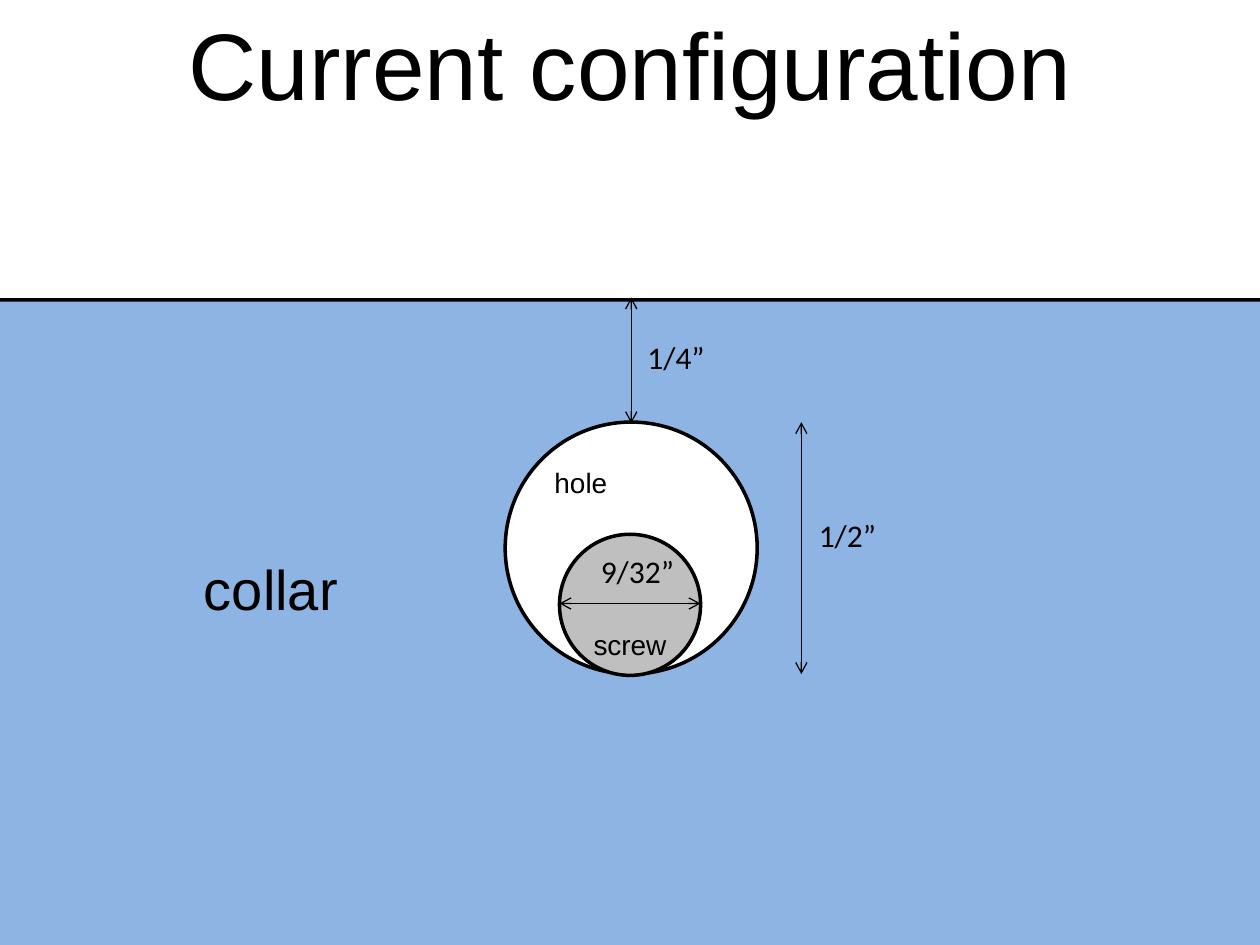
from lxml.etree import SubElement
from pptx import Presentation
from pptx.dml.color import RGBColor
from pptx.enum.shapes import MSO_CONNECTOR, MSO_SHAPE
from pptx.enum.text import MSO_ANCHOR, MSO_AUTO_SIZE, PP_ALIGN
from pptx.oxml.ns import qn
from pptx.util import Inches, Pt

COLORS = {"ink": "000000", "collar": "8EB4E3", "hole": "FFFFFF", "screw": "BFBFBF"}
COLUMNS, ROWS = 100, 75


class Diagram:
    """Draws styled elements on one slide, placed by grid columns and rows."""

    label_font = "Arial"
    dimension_font = "Calibri"
    outline_width = Pt(2)
    dimension_width = Pt(0.75)

    def __init__(self, presentation):
        self.slide = presentation.slides.add_slide(presentation.slide_layouts[6])
        self.column = presentation.slide_width / COLUMNS
        self.row = presentation.slide_height / ROWS

    def place(self, column, row):
        return round(column * self.column), round(row * self.row)

    def color(self, name):
        return RGBColor.from_string(COLORS[name])

    def add_words(self, frame, text, size, font, align):
        paragraph = frame.paragraphs[0]
        paragraph.alignment = align
        run = paragraph.add_run()
        run.text = text
        run.font.size = Pt(size)
        run.font.name = font
        run.font.color.rgb = self.color("ink")

    def shape(self, kind, left, top, width, height, fill):
        shape = self.slide.shapes.add_shape(
            kind, *self.place(left, top), *self.place(width, height))
        shape.shadow.inherit = False
        shape.fill.solid()
        shape.fill.fore_color.rgb = self.color(fill)
        shape.line.color.rgb = self.color("ink")
        shape.line.width = self.outline_width
        return shape

    def circle(self, center, middle, radius, fill, text, align, anchor, side, top, bottom):
        circle = self.shape(MSO_SHAPE.OVAL, center - radius, middle - radius,
                            2 * radius, 2 * radius, fill)
        frame = circle.text_frame
        frame.word_wrap = True
        frame.vertical_anchor = anchor
        frame.margin_left = frame.margin_right = Inches(side)
        frame.margin_top, frame.margin_bottom = Inches(top), Inches(bottom)
        self.add_words(frame, text, 16, self.label_font, align)

    def text(self, left, top, width, height, text, size, font, align=PP_ALIGN.LEFT, wrap=True):
        box = self.slide.shapes.add_textbox(*self.place(left, top), *self.place(width, height))
        frame = box.text_frame
        frame.word_wrap = wrap
        frame.auto_size = MSO_AUTO_SIZE.SHAPE_TO_FIT_TEXT
        self.add_words(frame, text, size, font, align)

    def dimension(self, start, end, label, left, top, width):
        connector = self.slide.shapes.add_connector(
            MSO_CONNECTOR.STRAIGHT, *self.place(*start), *self.place(*end))
        connector.line.color.rgb = self.color("ink")
        connector.line.width = self.dimension_width
        properties = connector._element.spPr
        for tag in ("a:headEnd", "a:tailEnd"):
            SubElement(properties.find(qn("a:ln")), qn(tag), type="arrow")
        SubElement(properties, qn("a:effectLst"))
        self.text(left, top, width, 4, label, 18, self.dimension_font)


def main():
    presentation = Presentation()
    presentation.slide_width, presentation.slide_height = Inches(10), Inches(7.5)
    diagram = Diagram(presentation)

    collar = diagram.shape(MSO_SHAPE.ROUNDED_RECTANGLE, -2.4, 23.8, 105.6, 53.2, "collar")
    collar.adjustments[0] = 0.02
    diagram.circle(50.1, 43.5, 10, "hole", "hole", PP_ALIGN.LEFT, MSO_ANCHOR.TOP,
                   0.1, 0.05, 0.05)
    diagram.text(0, 0, COLUMNS, 10.1, "Current configuration", 54,
                 diagram.label_font, PP_ALIGN.CENTER)
    diagram.dimension((50.1, 23.6), (50.1, 33.6), "1/4”", 50.4, 26.3, 11.5)
    diagram.text(15.2, 43.5, 12.7, 6.4, "collar", 32, diagram.label_font, wrap=False)
    diagram.circle(50, 48, 5.6, "screw", "screw", PP_ALIGN.CENTER, MSO_ANCHOR.MIDDLE,
                   0, 0.63, 0)
    diagram.dimension((44.4, 47.9), (55.6, 47.9), "9/32”", 46.7, 43.3, 12.4)
    diagram.dimension((63.6, 33.5), (63.6, 53.5), "1/2”", 64, 40.5, 11.5)

    presentation.save("out.pptx")


if __name__ == "__main__":
    main()
